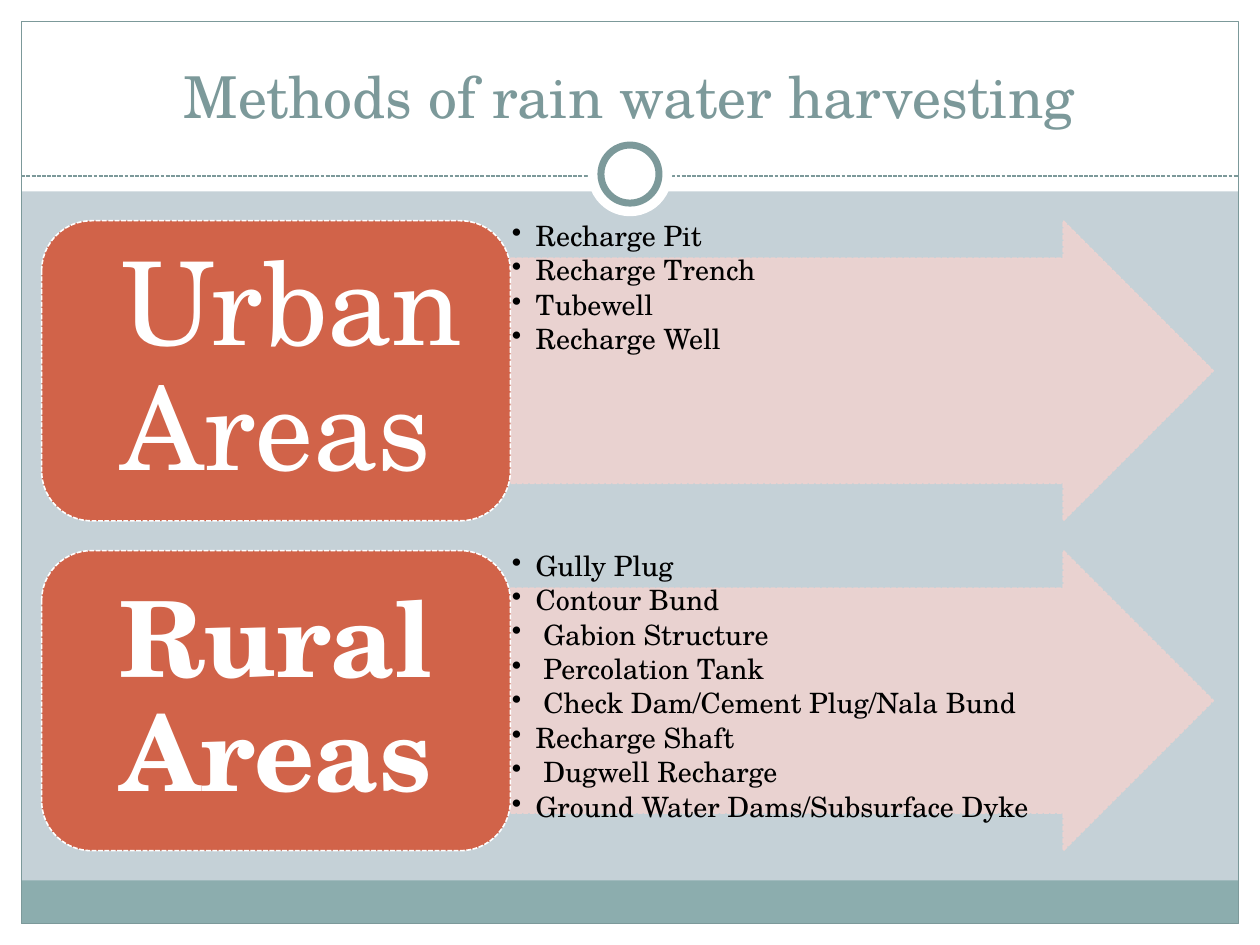
from dataclasses import dataclass

from lxml import etree
from pptx import Presentation
from pptx.dml.color import RGBColor
from pptx.enum.dml import MSO_LINE
from pptx.enum.shapes import MSO_CONNECTOR, MSO_SHAPE as Shp
from pptx.enum.text import MSO_ANCHOR as Anchor, PP_ALIGN as Align
from pptx.oxml.ns import qn
from pptx.util import Cm, Pt

FONT = "TeX Gyre Schola"
WHITE, BLACK, SAGE, TEAL = "FFFFFF", "000000", "7C999A", "8CADAE"
SKY, RUST, BLUSH = "C5D1D7", "D16349", "EED3D0"
W, H = 25.4, 19.05
EDGE = 0.43
BLOCK_TOP, BLOCK_H, BLOCK_GAP = 4.45, 6.05, 0.6
LABEL_X, LABEL_W, ARROW_W = 0.84, 9.45, 14.17


@dataclass
class Area:
    name: str
    size: float
    bold: bool
    inset: tuple[float, float]
    methods: list[str]


AREAS = [
    Area(" Urban Areas", 66, False, (0.39, 0.06),
         ["Recharge Pit", "Recharge Trench", "Tubewell", "Recharge Well"]),
    Area("Rural Areas", 60, True, (0.34, 0.01),
         ["Gully Plug", "Contour Bund", " Gabion Structure", " Percolation Tank",
          " Check Dam/Cement Plug/Nala Bund", "Recharge Shaft",
          " Dugwell Recharge", "Ground Water Dams/Subsurface Dyke"]),
]


def paint(fill, color: str, alpha: int = 100) -> None:
    fill.solid()
    fill.fore_color.rgb = RGBColor.from_string(color)
    if alpha < 100:
        clr = fill._xPr.find(qn("a:solidFill"))[0]
        etree.SubElement(clr, qn("a:alpha")).set("val", str(alpha * 1000))


def stroke(line, color: str, width: float, dashed: bool = False, alpha: int = 100) -> None:
    paint(line.fill, color, alpha)
    line.width = Pt(width)
    if dashed:
        line.dash_style = MSO_LINE.SQUARE_DOT


def add_shape(s, kind, x: float, y: float, w: float, h: float,
              fill: str | None = None, alpha: int = 100):
    sp = s.shapes.add_shape(kind, Cm(x), Cm(y), Cm(w), Cm(h))
    sp.shadow.inherit = False
    if fill:
        paint(sp.fill, fill, alpha)
    else:
        sp.fill.background()
    sp.line.fill.background()
    return sp


def write(sp, lines: list[str], *, size: float, color: str, bold: bool = False,
          align=Align.CENTER, anchor=Anchor.MIDDLE, inset=(0.25, 0.13),
          spacing: float = 1, after: float = 0, bullet: bool = False) -> None:
    tf = sp.text_frame
    tf.word_wrap = True
    tf.vertical_anchor = anchor
    tf.margin_left = tf.margin_right = Cm(inset[0])
    tf.margin_top = tf.margin_bottom = Cm(inset[1])
    for i, line in enumerate(lines):
        p = tf.add_paragraph() if i else tf.paragraphs[0]
        p.alignment, p.line_spacing, p.space_after = align, spacing, Pt(after)
        if bullet:
            pPr = p._p.get_or_add_pPr()
            pPr.set("marL", str(Cm(0.48)))
            pPr.set("indent", str(-Cm(0.48)))
            etree.SubElement(pPr, qn("a:buChar")).set("char", "•")
        r = p.add_run()
        r.text = line
        r.font.name, r.font.size, r.font.bold = FONT, Pt(size), bold
        r.font.color.rgb = RGBColor.from_string(color)


def add_disc(s, center_y: float, d: float):
    return add_shape(s, Shp.OVAL, (W - d) / 2, center_y - d / 2, d, d, WHITE)


def draw_frame(s) -> None:
    paint(s.background.fill, SKY)
    # White margins and header
    for x, y, w, h in [(0, H - EDGE, W, EDGE), (0, 0, W, 3.86),
                       (0, 0, EDGE, H), (W - EDGE, 0, EDGE, H)]:
        add_shape(s, Shp.RECTANGLE, x, y, w, h, WHITE)
    # Footer band and border
    inner = W - 2 * EDGE
    add_shape(s, Shp.RECTANGLE, EDGE, 17.75, inner, 0.87, TEAL)
    border = add_shape(s, Shp.RECTANGLE, EDGE, EDGE, inner, H - 2 * EDGE)
    stroke(border.line, SAGE, 0.75)
    # Dashed rule with a ring in the middle
    rule = s.shapes.add_connector(MSO_CONNECTOR.STRAIGHT, Cm(EDGE), Cm(3.55),
                                  Cm(W - EDGE), Cm(3.55))
    stroke(rule.line, SAGE, 0.75, dashed=True)
    etree.SubElement(rule._element.spPr, qn("a:effectLst"))
    add_disc(s, 3.51, 1.7)
    stroke(add_disc(s, 3.51, 1.17).line, SAGE, 4)


def draw_area(s, area: Area, y: float) -> None:
    x = LABEL_X + LABEL_W
    arrow = add_shape(s, Shp.RIGHT_ARROW, x, y, ARROW_W, BLOCK_H, BLUSH, 90)
    arrow.adjustments[0] = 0.75
    stroke(arrow.line, BLUSH, 0.9, dashed=True, alpha=90)
    box = s.shapes.add_textbox(Cm(x), Cm(y), Cm(ARROW_W), Cm(BLOCK_H))
    write(box, area.methods, size=16, color=BLACK, align=Align.LEFT,
          anchor=Anchor.TOP, inset=(0.03, 0.03), spacing=0.9, after=2.4, bullet=True)
    label = add_shape(s, Shp.ROUNDED_RECTANGLE, LABEL_X, y, LABEL_W, BLOCK_H, RUST)
    stroke(label.line, WHITE, 0.9, dashed=True)
    write(label, [area.name], size=area.size, color=WHITE, bold=area.bold,
          inset=area.inset, spacing=0.9)


def main() -> None:
    prs = Presentation()
    prs.slide_width, prs.slide_height = Cm(W), Cm(H)
    s = prs.slides.add_slide(prs.slide_layouts[6])
    draw_frame(s)
    title = s.shapes.add_textbox(Cm(0.84), Cm(0.64), Cm(23.7), Cm(2.11))
    write(title, ["Methods of rain water harvesting"], size=33, color=SAGE,
          anchor=Anchor.BOTTOM)
    for i, area in enumerate(AREAS):
        draw_area(s, area, BLOCK_TOP + i * (BLOCK_H + BLOCK_GAP))
    prs.save("out.pptx")


if __name__ == "__main__":
    main()
